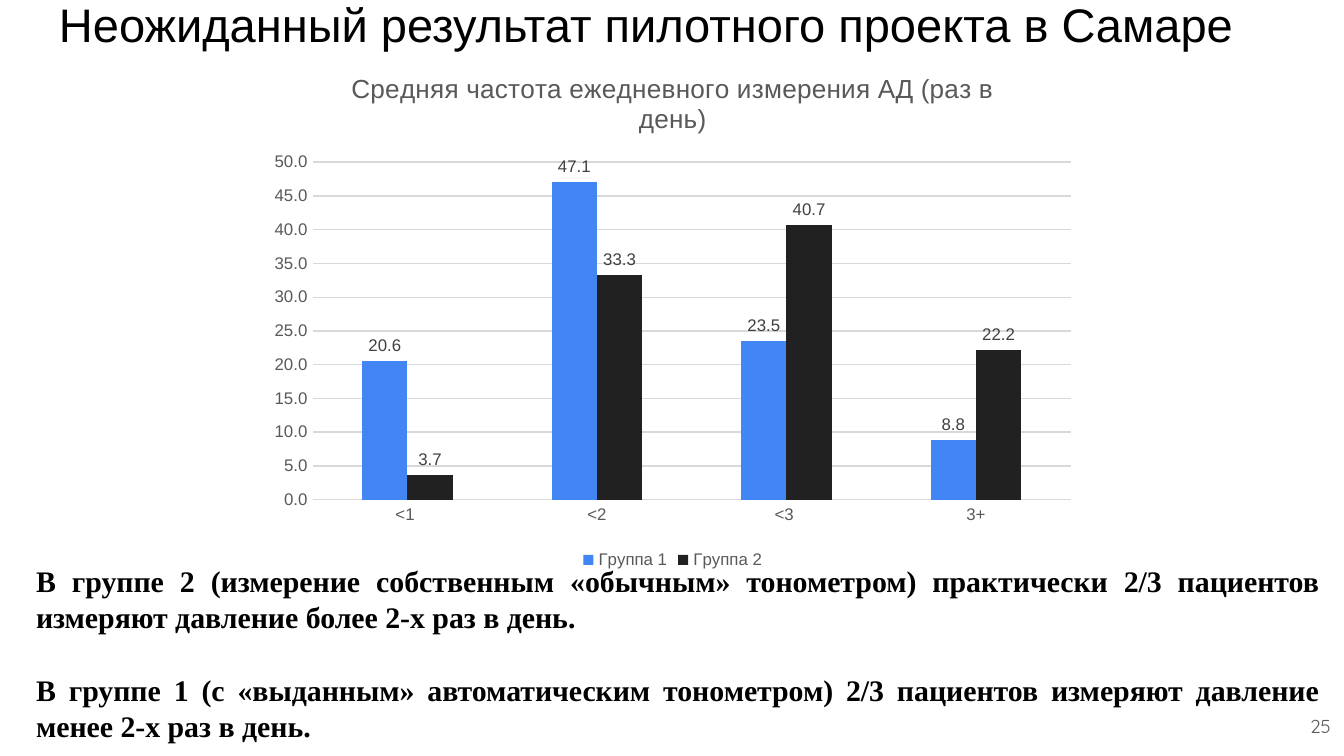
"""Build the slide on how often two patient groups measure blood pressure."""
from dataclasses import dataclass

from pptx import Presentation
from pptx.chart.data import CategoryChartData
from pptx.dml.color import RGBColor
from pptx.enum.chart import XL_CHART_TYPE, XL_LABEL_POSITION, XL_LEGEND_POSITION, XL_TICK_MARK
from pptx.enum.text import MSO_ANCHOR, PP_ALIGN
from pptx.util import Inches, Pt

COLUMNS = XL_CHART_TYPE.COLUMN_CLUSTERED
OUTSIDE_END = XL_LABEL_POSITION.OUTSIDE_END
LEGEND_BOTTOM = XL_LEGEND_POSITION.BOTTOM
NO_TICKS = XL_TICK_MARK.NONE
TOP, MIDDLE = MSO_ANCHOR.TOP, MSO_ANCHOR.MIDDLE
LEFT, RIGHT, JUSTIFY = PP_ALIGN.LEFT, PP_ALIGN.RIGHT, PP_ALIGN.JUSTIFY

COLORS = {
    "text": "000000",
    "muted": "595959",
    "label": "404040",
    "grid": "D9D9D9",
    "group1": "4285F4",
    "group2": "212121",
}


@dataclass(frozen=True)
class TextBlock:
    paragraphs: tuple[str, ...]
    box: tuple[float, float, float, float]
    font: str
    size: float
    color: str = "text"
    bold: bool = False
    align: PP_ALIGN = LEFT
    anchor: MSO_ANCHOR = TOP
    inset_y: float = 0.1
    indent: float = 0
    gap: float = 0


@dataclass(frozen=True)
class Group:
    name: str
    values: tuple[float, ...]
    color: str


TEXTS = (
    TextBlock(("Неожиданный результат пилотного проекта в Самаре",),
              (0.34, -0.13, 9.32, 0.63), "Arial", 25.2),
    TextBlock(("25",), (9.4, 5.19, 0.6, 0.43), "Quicksand", 10, "muted",
              align=RIGHT, anchor=MIDDLE),
    TextBlock(
        ("В группе 2 (измерение собственным «обычным» тонометром) практически 2/3 "
         "пациентов измеряют давление более 2-х раз в день. ",
         "В группе 1 (с «выданным» автоматическим тонометром) 2/3 пациентов измеряют "
         "давление менее 2-х раз в день. "),
        (-0.08, 4.14, 10, 1.45), "Times New Roman", 16, bold=True, align=JUSTIFY,
        inset_y=0.05, indent=0.25, gap=20),
)
FREQUENCIES = ("<1 ", "<2", "<3 ", "3+")
GROUPS = (
    Group("Группа 1", (20.6, 47.1, 23.5, 8.8), "group1"),
    Group("Группа 2", (3.7, 33.3, 40.7, 22.2), "group2"),
)


def rgb(name: str) -> RGBColor:
    return RGBColor.from_string(COLORS[name])


def style_font(font, size: float, color: str, name: str = "Arial", bold: bool = False) -> None:
    font.name = name
    font.size = Pt(size)
    font.bold = bold
    font.color.rgb = rgb(color)


def add_text(slide, block: TextBlock) -> None:
    frame = slide.shapes.add_textbox(*map(Inches, block.box)).text_frame
    frame.word_wrap = True
    frame.vertical_anchor = block.anchor
    frame.margin_left = frame.margin_right = Inches(0.1)
    frame.margin_top = frame.margin_bottom = Inches(block.inset_y)
    for index, text in enumerate(block.paragraphs):
        paragraph = frame.add_paragraph() if index else frame.paragraphs[0]
        paragraph.alignment = block.align
        if index:
            paragraph.space_before = Pt(block.gap)
        if block.indent:
            paragraph._p.get_or_add_pPr().set("marL", str(Inches(block.indent)))
        run = paragraph.add_run()
        run.text = text
        style_font(run.font, block.size, block.color, block.font, block.bold)


def style_axes(chart) -> None:
    for axis in (chart.category_axis, chart.value_axis):
        axis.major_tick_mark = axis.minor_tick_mark = NO_TICKS
        style_font(axis.tick_labels.font, 9, "muted")
    frequency_line = chart.category_axis.format.line
    percent_axis = chart.value_axis
    percent_axis.minimum_scale, percent_axis.maximum_scale = 0, 50
    percent_axis.major_unit = 5
    percent_axis.tick_labels.number_format = "0.0"
    percent_axis.tick_labels.number_format_is_linked = False
    percent_axis.format.line.fill.background()
    for line in (frequency_line, percent_axis.major_gridlines.format.line):
        line.color.rgb = rgb("grid")
        line.width = Pt(0.75)


def add_frequency_chart(slide) -> None:
    data = CategoryChartData(number_format="0.0")
    data.categories = FREQUENCIES
    for group in GROUPS:
        data.add_series(group.name, group.values)
    box = map(Inches, (1.92, 0.37, 6.17, 3.91))
    chart = slide.shapes.add_chart(COLUMNS, *box, data).chart
    style_font(chart.font, 10, "text")
    chart.has_title = True
    heading = chart.chart_title.text_frame.paragraphs[0].add_run()
    heading.text = "Средняя частота ежедневного измерения АД (раз в день)"
    style_font(heading.font, 14, "muted")
    chart.chart_title.include_in_layout = False
    chart.has_legend = True
    chart.legend.position = LEGEND_BOTTOM
    chart.legend.include_in_layout = False
    style_font(chart.legend.font, 9, "muted")
    style_axes(chart)
    plot = chart.plots[0]
    plot.gap_width, plot.overlap = 219, 0
    plot.vary_by_categories = False
    for series, group in zip(plot.series, GROUPS):
        series.format.fill.solid()
        series.format.fill.fore_color.rgb = rgb(group.color)
        series.invert_if_negative = False
        labels = series.data_labels
        labels.show_value = True
        labels.position = OUTSIDE_END
        labels.number_format = "0.0"
        labels.number_format_is_linked = False
        style_font(labels.font, 9, "label")


def main() -> None:
    presentation = Presentation()
    presentation.slide_width = Inches(10)
    presentation.slide_height = Inches(10) * 9 // 16
    slide = presentation.slides.add_slide(presentation.slide_layouts[6])
    add_frequency_chart(slide)
    for block in TEXTS:
        add_text(slide, block)
    presentation.save("out.pptx")


if __name__ == "__main__":
    main()
